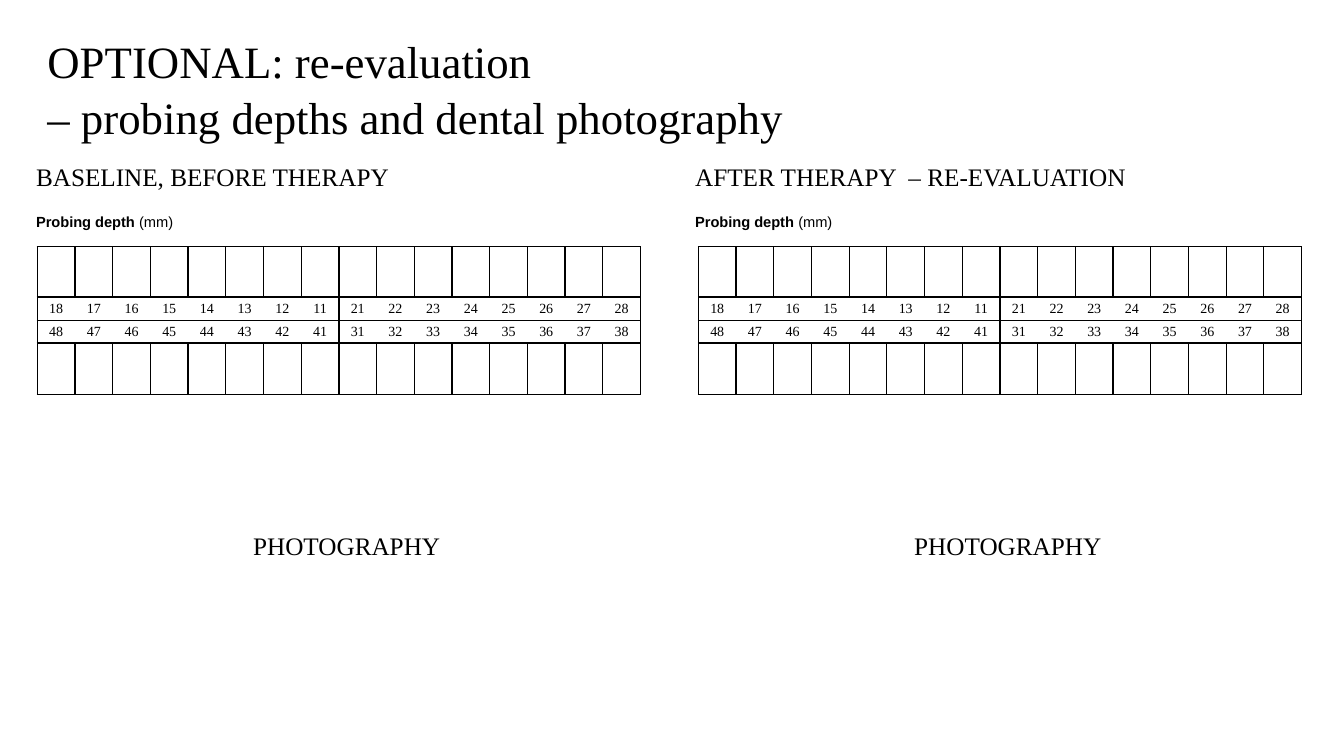
from pptx import Presentation
from pptx.dml.color import RGBColor
from pptx.enum.text import MSO_ANCHOR as Anchor, MSO_AUTO_SIZE as AutoSize, PP_ALIGN as Align
from pptx.oxml.ns import qn
from pptx.util import Cm, Pt
from lxml.etree import SubElement

BLACK = "000000"
SERIF, SANS = "Times New Roman", "Arial"
COL_W = 0.95
ROW_H = [1.27, 0.58, 0.58, 1.29]
ROW_LINES = [1, 1.5, 1, 1.5, 1]
UPPER_TEETH = [*range(18, 10, -1), *range(21, 29)]
LOWER_TEETH = [*range(48, 40, -1), *range(31, 39)]
TOOTH_ROWS = {1: UPPER_TEETH, 2: LOWER_TEETH}
COLS = len(UPPER_TEETH)


def color(value):
    return RGBColor.from_string(value)


def style(r, size, font=SERIF, bold=False):
    r.font.size = Pt(size)
    r.font.name = font
    r.font.bold = bold
    r.font.color.rgb = color(BLACK)


def add_title(s, left, top, width, height):
    sp = s.shapes.title
    sp.left, sp.top, sp.width, sp.height = Cm(left), Cm(top), Cm(width), Cm(height)
    tf = sp.text_frame
    tf.text = "OPTIONAL: re-evaluation \v– probing depths and dental photography"
    tf.vertical_anchor = Anchor.MIDDLE
    p = tf.paragraphs[0]
    p.alignment = Align.LEFT
    p.line_spacing = 1.05
    for r in p.runs:
        style(r, 32)


def add_label(s, text, left, top, width):
    tf = s.shapes.add_textbox(Cm(left), Cm(top), Cm(width), Cm(1.02)).text_frame
    tf.word_wrap = False
    tf.auto_size = AutoSize.SHAPE_TO_FIT_TEXT
    tf.text = text
    style(tf.paragraphs[0].runs[0], 18)


def add_depth_caption(s, left, top, width):
    tf = s.shapes.add_textbox(Cm(left), Cm(top), Cm(width), Cm(1.3)).text_frame
    tf.word_wrap = True
    p = tf.paragraphs[0]
    for text, bold in [("Probing depth ", True), ("(mm)", False)]:
        r = p.add_run()
        r.text = text
        style(r, 10.5, SANS, bold)


def set_borders(cell, **weights):
    """Draw each side with its weight in points; zero means no line."""
    tcPr = cell._tc.get_or_add_tcPr()
    for side, weight in weights.items():
        ln = SubElement(tcPr, qn(f"a:ln{side}"), w=str(Pt(weight)))
        if weight:
            fill = SubElement(ln, qn("a:solidFill"))
            SubElement(fill, qn("a:srgbClr"), val=BLACK)
        else:
            SubElement(ln, qn("a:noFill"))


def column_line(row, edge):
    if edge == COLS // 2:
        return 1.5
    return 1 if row not in TOOTH_ROWS or edge in (0, COLS) else 0


def add_tooth_chart(s, left, top):
    table = s.shapes.add_table(len(ROW_H), COLS, Cm(left), Cm(top),
                               Cm(COL_W * COLS), Cm(sum(ROW_H))).table
    table.first_row = table.horz_banding = False
    for column in table.columns:
        column.width = Cm(COL_W)
    for i, height in enumerate(ROW_H):
        table.rows[i].height = Cm(height)
        for j in range(COLS):
            cell = table.cell(i, j)
            set_borders(cell, L=column_line(i, j), R=column_line(i, j + 1),
                        T=ROW_LINES[i], B=ROW_LINES[i + 1])
            cell.fill.background()
            if i in TOOTH_ROWS:
                cell.text = str(TOOTH_ROWS[i][j])
                cell.vertical_anchor = Anchor.MIDDLE
                cell.margin_left = cell.margin_right = Cm(0.18)
                cell.margin_top = cell.margin_bottom = 0
                p = cell.text_frame.paragraphs[0]
                p.alignment = Align.CENTER
                style(p.runs[0], 10)


def add_panel(s, heading, heading_width, left, top, chart_indent):
    """Heading, caption, tooth chart and photo label of one examination."""
    chart_left = left + chart_indent
    add_label(s, heading, left, top, heading_width)
    add_depth_caption(s, left, top + 1.3, 15.54)
    add_tooth_chart(s, chart_left, top + 2.28)
    add_label(s, "PHOTOGRAPHY", chart_left + 5.19, top + 9.29, 5.28)


def main():
    prs = Presentation()
    prs.slide_width, prs.slide_height = Cm(33.87), Cm(19.05)
    s = prs.slides.add_slide(prs.slide_layouts[5])
    add_title(s, 0.94, 0.61, 30.48, 3.18)
    add_panel(s, "BASELINE, BEFORE THERAPY", 9.5, 0.66, 3.94, 0.28)
    add_panel(s, "AFTER THERAPY  – RE-EVALUATION", 11.48, 17.27, 3.94, 0.33)
    prs.save("out.pptx")


if __name__ == "__main__":
    main()
